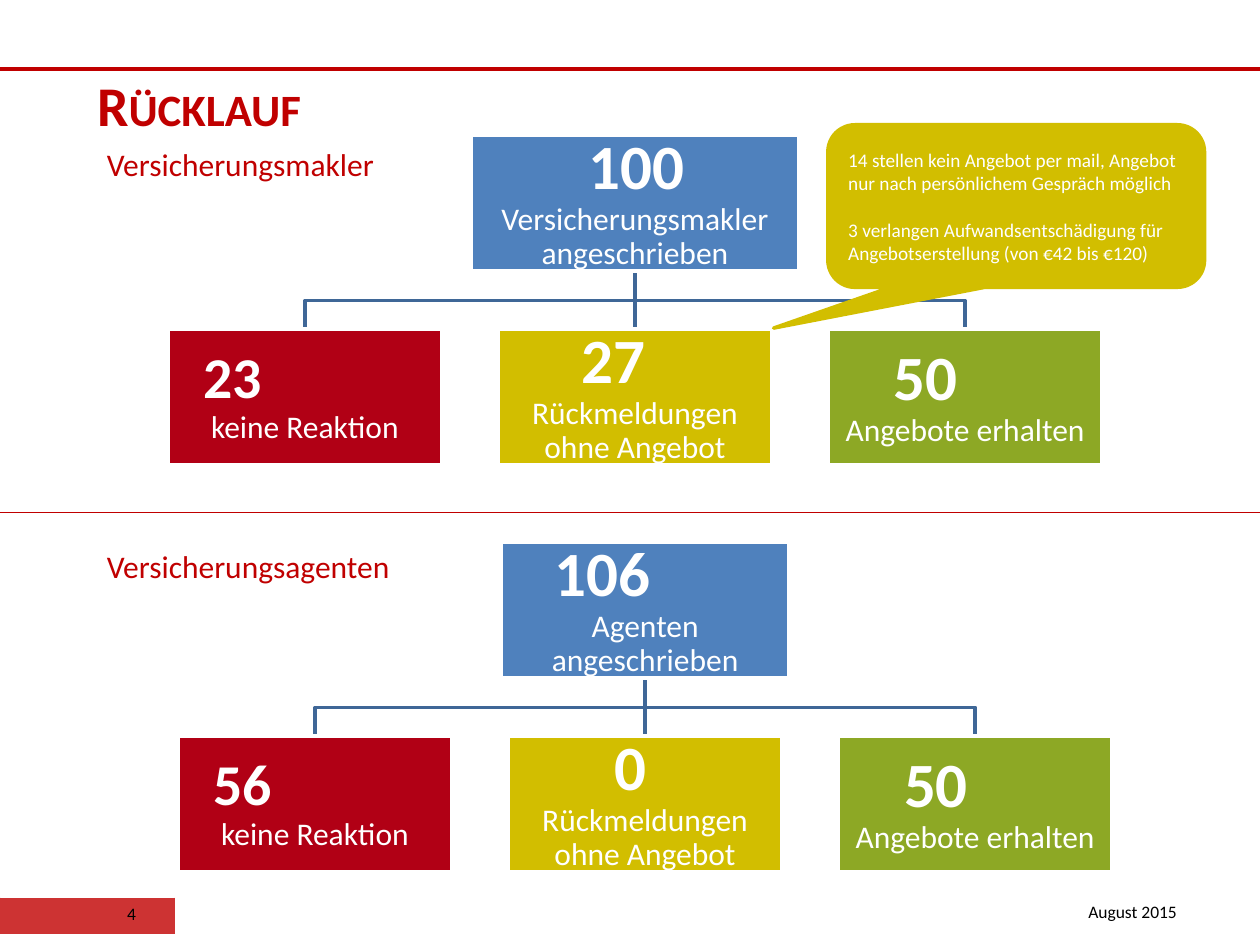
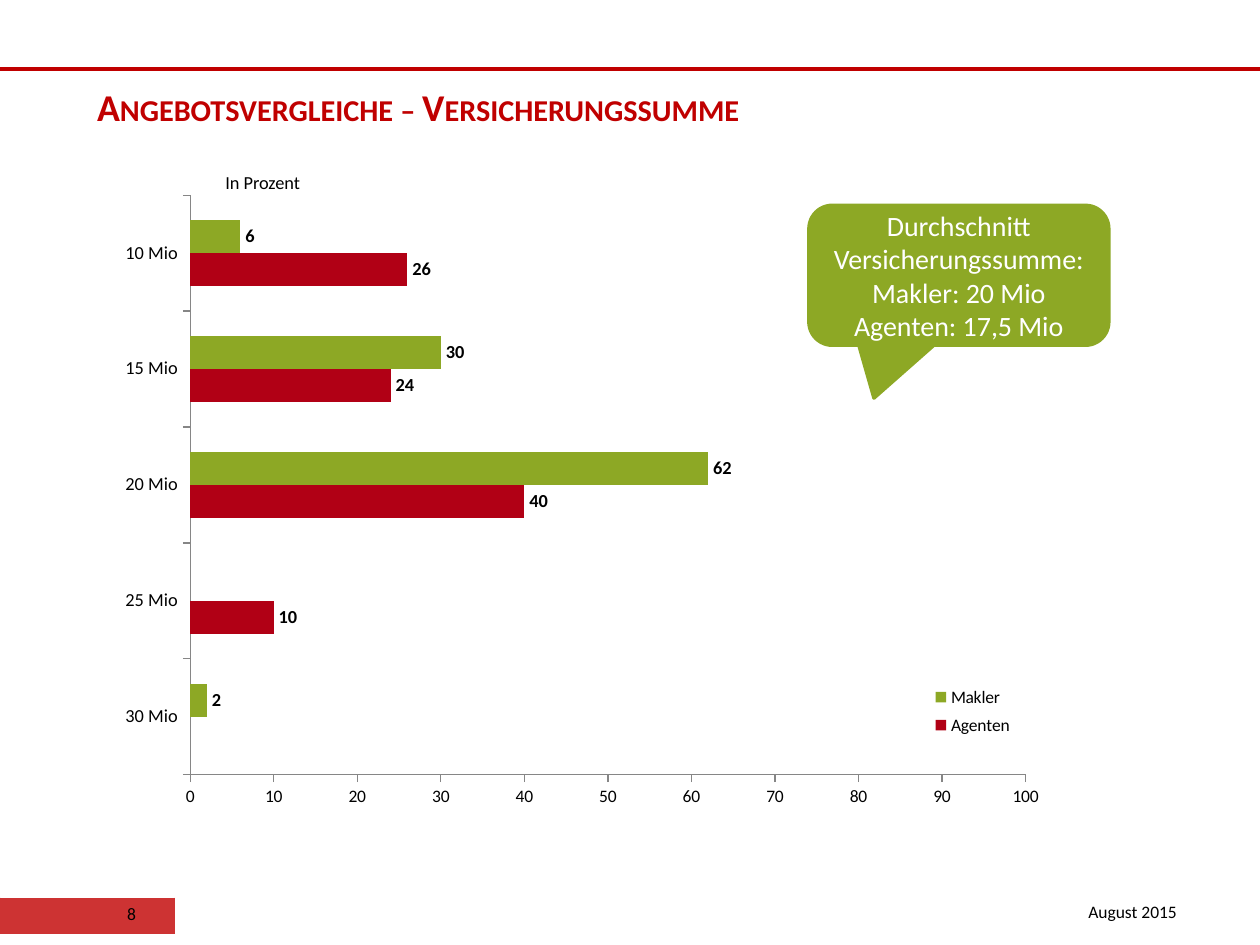
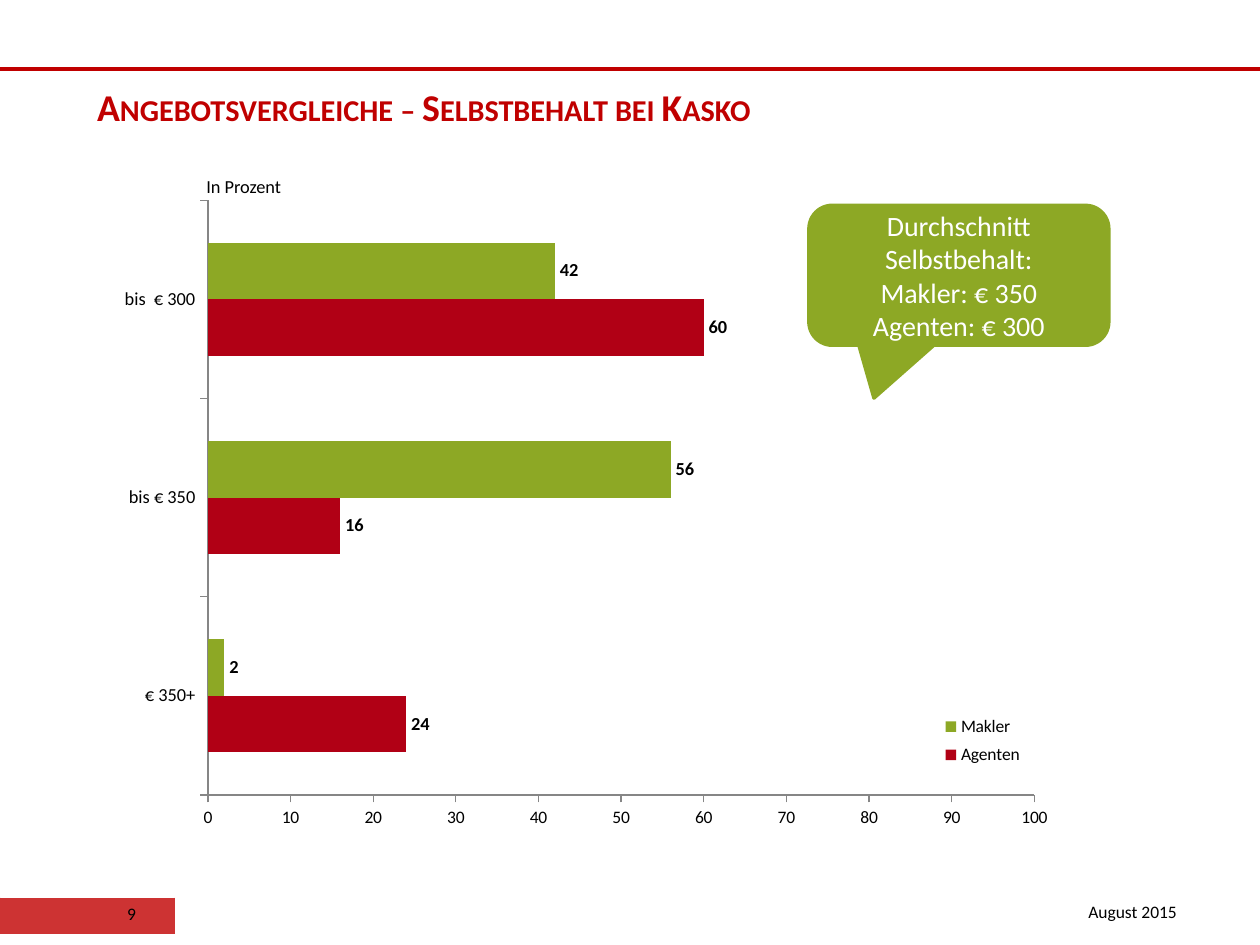
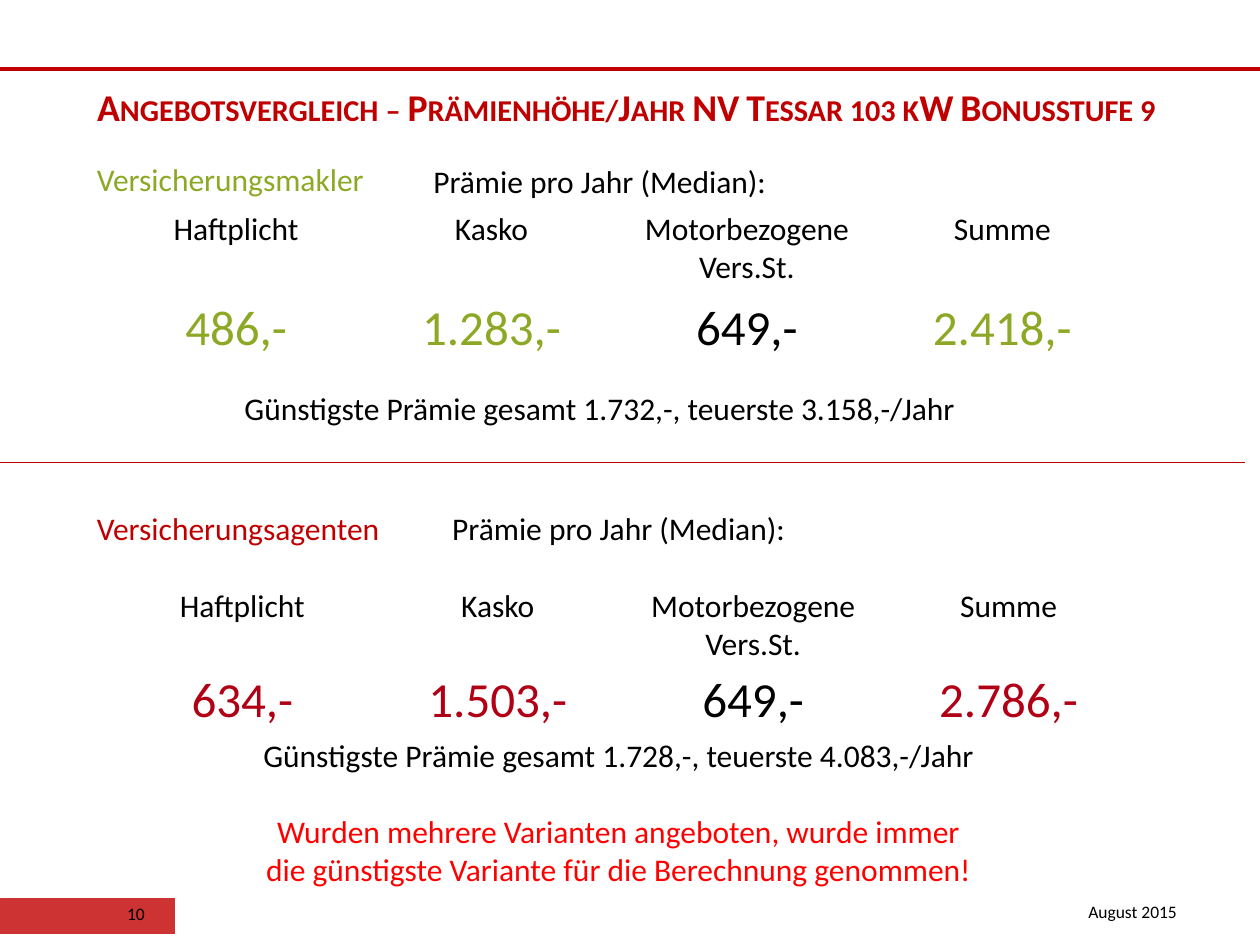
from lxml import etree
from pptx import Presentation
from pptx.chart.data import CategoryChartData
from pptx.dml.color import RGBColor
from pptx.enum.chart import XL_CHART_TYPE, XL_LABEL_POSITION, XL_LEGEND_POSITION, XL_TICK_MARK
from pptx.enum.shapes import MSO_CONNECTOR, MSO_SHAPE
from pptx.enum.text import MSO_ANCHOR, PP_ALIGN
from pptx.oxml.ns import qn
from pptx.util import Inches, Pt

BARS = XL_CHART_TYPE.BAR_CLUSTERED
OUT_END = XL_LABEL_POSITION.OUTSIDE_END
RIGHT = XL_LEGEND_POSITION.RIGHT
TICK_OUT = XL_TICK_MARK.OUTSIDE
LINE = MSO_CONNECTOR.STRAIGHT
RECT = MSO_SHAPE.RECTANGLE
CALLOUT = MSO_SHAPE.ROUNDED_RECTANGULAR_CALLOUT
TOP, MIDDLE, BOTTOM = MSO_ANCHOR.TOP, MSO_ANCHOR.MIDDLE, MSO_ANCHOR.BOTTOM
LEFT, CENTER = PP_ALIGN.LEFT, PP_ALIGN.CENTER

FONT = "Calibri"
SIDES = ("left", "top", "right", "bottom")
RED = RGBColor(0xC0, 0x00, 0x00)
BAND = RGBColor(0xCD, 0x33, 0x33)
CRIMSON = RGBColor(0xB1, 0x00, 0x15)
GREEN = RGBColor(0x8D, 0xA8, 0x25)
YELLOW = RGBColor(0xD2, 0xBE, 0x00)
BLUE = RGBColor(0x4F, 0x81, 0xBD)
STEEL = RGBColor(0x3F, 0x67, 0x97)
GREY = RGBColor(0x86, 0x86, 0x86)
ALERT = RGBColor(0xFF, 0x00, 0x00)
BLACK = RGBColor(0x00, 0x00, 0x00)
WHITE = RGBColor(0xFF, 0xFF, 0xFF)

DATE = "August 2015"

# Each node: number, size, indent of the number, label
TREES = [
    dict(name="Versicherungsmakler", name_top=1.1, mid=5.04, top=1.07, wide=2.6,
         root=("100", 36, 0.9, "Versicherungsmakler angeschrieben"),
         kids=[("23", 33, 0.25, "keine Reaktion"),
               ("27", 36, 0.63, "Rückmeldungen ohne Angebot"),
               ("50", 36, 0.49, "Angebote erhalten")]),
    dict(name="Versicherungsagenten", name_top=4.29, mid=5.12, top=4.3, wide=2.28,
         root=("106", 36, 0.39, "Agenten angeschrieben"),
         kids=[("56", 33, 0.25, "keine Reaktion"),
               ("0", 36, 0.81, "Rückmeldungen ohne Angebot"),
               ("50", 36, 0.49, "Angebote erhalten")]),
]
KID_FILLS = [CRIMSON, YELLOW, GREEN]
REMARKS = [
    "14 stellen kein Angebot per mail, Angebot nur nach persönlichem Gespräch möglich",
    "3 verlangen Aufwandsentschädigung für Angebotserstellung (von €42 bis €120)",
]

CHARTS = [
    dict(page=8, title="Angebotsvergleiche – Versicherungssumme",
         box=(0.83, 1.45, 8.35, 5.05), unit=(1.69, 1.31),
         plot=(1.51, 1.55, 6.63, 4.6), key=(7.3, 5.39, 0.84, 0.51),
         cats=["30 Mio", "25 Mio", "20 Mio", "15 Mio", "10 Mio"],
         rows=[("Agenten", [None, 10, 40, 24, 26]), ("Makler", [2, None, 62, 30, 6])],
         mean=["Durchschnitt Versicherungssumme:", "Makler: 20 Mio", "Agenten: 17,5 Mio"]),
    dict(page=9, title="Angebotsvergleiche – Selbstbehalt bei Kasko",
         box=(0.83, 1.48, 8.43, 5.18), unit=(1.54, 1.34),
         plot=(1.65, 1.59, 6.56, 4.72), key=(7.38, 5.62, 0.84, 0.52),
         cats=["€ 350+", "bis € 350", "bis  € 300"],
         rows=[("Agenten", [24, 16, 60]), ("Makler", [2, 56, 42])],
         mean=["Durchschnitt Selbstbehalt:", "Makler: € 350", "Agenten: € 300"]),
]
ROW_FILLS = [CRIMSON, GREEN]

HEADS = ["Haftplicht", "Kasko", "Motorbezogene Vers.St.", "Summe"]
MEDIAN = "Prämie pro Jahr (Median):"
FEES = [
    dict(name="Versicherungsmakler", name_box=(0.67, 1.22, 2.4, 0.4), hue=GREEN, tint=GREEN,
         note_box=(1.77, 1.24, 5.98, 2.22), grid=(0.86, 1.62), heights=(0.41, 0.41), tight=False,
         sums=["486,-", "1.283,-", "649,-", "2.418,-"],
         notes=[(MEDIAN, {}),
                ("Günstigste Prämie gesamt 1.732,-, teuerste 3.158,-/Jahr", dict(before=108))]),
    dict(name="Versicherungsagenten", name_box=(0.67, 3.99, 2.6, 0.4), hue=RED, tint=CRIMSON,
         note_box=(1.92, 3.99, 5.98, 3.13), grid=(0.91, 4.61), heights=(0.41, 0.49), tight=True,
         sums=["634,-", "1.503,-", "649,-", "2.786,-"],
         notes=[(MEDIAN, {}),
                ("Günstigste Prämie gesamt 1.728,-, teuerste 4.083,-/Jahr", dict(before=108)),
                ("Wurden mehrere Varianten angeboten, wurde immer die günstigste Variante "
                 "für die Berechnung genommen!", dict(before=22, color=ALERT))]),
]


def style(font, size, color=BLACK, bold=False):
    for key, value in dict(name=FONT, size=Pt(size), bold=bold).items():
        setattr(font, key, value)
    font.color.rgb = color


def pad(part, inset):
    for side in SIDES:
        setattr(part, "margin_" + side, Inches(inset))


def write(frame, paras, anchor=TOP, inset=None, **base):
    """Fill a frame with (text, format) pairs; base holds the common format."""
    frame.word_wrap = True
    frame.vertical_anchor = anchor
    if inset is not None:
        pad(frame, inset)
    for i, (text, own) in enumerate(paras):
        form = {**base, **own}
        para = frame.paragraphs[0] if i == 0 else frame.add_paragraph()
        para.alignment = form.get("align", LEFT)
        para.line_spacing = form.get("spacing", 1.0)
        para.space_before = Pt(form.get("before", 0))
        if "indent" in form:
            para._p.get_or_add_pPr().set("marL", str(Inches(form["indent"])))
        run = para.add_run()
        run.text = text
        style(run.font, form["size"], form.get("color", BLACK), form.get("bold", False))
    return frame


def label(slide, box, text, size, **form):
    frame = slide.shapes.add_textbox(*map(Inches, box)).text_frame
    return write(frame, [(text, {})], size=size, **form)


def block(slide, kind, box, fill, edge):
    shape = slide.shapes.add_shape(kind, *map(Inches, box))
    shape.shadow.inherit = False
    shape.fill.solid()
    shape.fill.fore_color.rgb = fill
    shape.line.color.rgb = edge
    shape.line.width = Pt(2)
    return shape


def rule(slide, start, end, color, width):
    line = slide.shapes.add_connector(LINE, *map(Inches, start + end))
    line.line.color.rgb = color
    line.line.width = Pt(width)
    etree.SubElement(line._element.spPr, qn("a:effectLst"))


def callout(slide, box, tail, fill, paras, **form):
    shape = block(slide, CALLOUT, box, fill, fill)
    for i, value in enumerate(tail + (0.167,)):
        shape.adjustments[i] = value
    write(shape.text_frame, paras, anchor=MIDDLE, color=WHITE, **form)


def plain(slide, box, rows, cols):
    """Add a table without banding or header style."""
    table = slide.shapes.add_table(rows, cols, *map(Inches, box)).table
    table.first_row = table.horz_banding = False
    return table


def band(slide):
    cell = plain(slide, (0, 7.13, 1.38, 0.28), 1, 1).cell(0, 0)
    para = cell.text_frame.paragraphs[0]
    etree.SubElement(para._p, qn("a:endParaRPr")).set("sz", "800")
    cell.fill.solid()
    cell.fill.fore_color.rgb = BAND
    props = cell._tc.get_or_add_tcPr()
    for i, side in enumerate("LRTB"):
        edge = etree.Element(qn("a:ln" + side), w=str(Pt(1)))
        paint = etree.SubElement(edge, qn("a:solidFill"))
        etree.SubElement(paint, qn("a:srgbClr")).set("val", str(BAND))
        props.insert(i, edge)


def start(deck, page, title, box=(0.28, 0.62, 9.72, 0.45), size=21.6, anchor=BOTTOM):
    """Add a slide with its band, footer, top rule and title."""
    slide = deck.slides.add_slide(deck.slide_layouts[6])
    band(slide)
    label(slide, (8.54, 7.1, 1.14, 0.27), DATE, 10)
    label(slide, (0.91, 7.12, 0.71, 0.27), str(page), 10)
    rule(slide, (0, 0.55), (10, 0.55), RED, 2.5)
    frame = label(slide, box, title, size, color=RED, bold=True, anchor=anchor)
    frame.margin_left = Inches(0.49)
    frame.paragraphs[0].runs[0]._r.get_or_add_rPr().set("cap", "small")
    return slide


def node(slide, box, fill, data):
    count, size, indent, text = data
    shape = block(slide, RECT, box, fill, WHITE)
    write(shape.text_frame,
          [(count, dict(size=size, bold=True, indent=indent)), (text, dict(size=18, align=CENTER))],
          anchor=MIDDLE, inset=0.03, color=WHITE, spacing=0.9)


def branch(slide, points):
    (x, y), *rest = [(Inches(a), Inches(b)) for a, b in points]
    pen = slide.shapes.build_freeform(x, y)
    pen.add_line_segments(rest, close=False)
    shape = pen.convert_to_shape()
    shape.shadow.inherit = False
    shape.fill.background()
    shape.line.color.rgb = STEEL
    shape.line.width = Pt(2)


def tree(slide, name, name_top, mid, top, wide, root, kids):
    high, kid_wide, pitch, drop = 1.08, 2.17, 2.62, 1.54
    low, kid_top = top + high + 0.01, top + drop
    bend = (low + kid_top) / 2
    mids = [mid + (i - 1) * pitch for i in range(len(kids))]
    for x in mids:
        turn = [] if x == mid else [(mid, bend), (x, bend)]
        branch(slide, [(mid, low), *turn, (x, kid_top)])
    node(slide, (mid - wide / 2, top, wide, high), BLUE, root)
    for x, fill, kid in zip(mids, KID_FILLS, kids):
        node(slide, (x - kid_wide / 2, kid_top, kid_wide, high), fill, kid)
    label(slide, (0.75, name_top, 2.6, 0.4), name, 18, color=RED)


def place(part, index, box, area):
    """Lay out a chart part at a slide box, as fractions of the chart area."""
    for old in part.findall(qn("c:layout")):
        part.remove(old)
    layout = etree.Element(qn("c:layout"))
    manual = etree.SubElement(layout, qn("c:manualLayout"))
    left, top, wide, high = area
    x, y, w, h = box
    parts = ((x - left) / wide, (y - top) / high, w / wide, h / high)
    items = [("xMode", "edge"), ("yMode", "edge"), *zip("xywh", parts)]
    if index == 0:
        items.insert(0, ("layoutTarget", "inner"))
    for tag, value in items:
        etree.SubElement(manual, qn("c:" + tag)).set("val", str(value))
    part.insert(index, layout)


def bars(slide, box, cats, rows, plot, key):
    data = CategoryChartData()
    data.categories = cats
    for name, values in rows:
        data.add_series(name, values)
    chart = slide.shapes.add_chart(BARS, *map(Inches, box), data).chart
    style(chart.font, 10)
    chart.has_title = False
    chart.has_legend = True
    chart.legend.position = RIGHT
    chart.legend.include_in_layout = False
    place(chart._chartSpace.chart.plotArea, 0, plot, box)
    place(chart.legend._element, 1, key, box)
    for axis, size in ((chart.category_axis, 10.5), (chart.value_axis, 10)):
        axis.has_major_gridlines = False
        axis.major_tick_mark = TICK_OUT
        axis.format.line.color.rgb = GREY
        style(axis.tick_labels.font, size)
    for name, value in dict(minimum_scale=0, maximum_scale=100, major_unit=10).items():
        setattr(chart.value_axis, name, value)
    group = chart.plots[0]
    for name, value in dict(gap_width=150, overlap=0, vary_by_categories=False).items():
        setattr(group, name, value)
    for series, fill in zip(group.series, ROW_FILLS):
        series.format.fill.solid()
        series.format.fill.fore_color.rgb = fill
        series.data_labels.show_value = True
        series.data_labels.position = OUT_END
        style(series.data_labels.font, 10.5, bold=True)


def grid(slide, spot, heights, sums, tint, tight):
    table = plain(slide, spot + (8.11, sum(heights)), 2, len(HEADS))
    for row, high in zip(table.rows, heights):
        row.height = Inches(high)
    for c, pair in enumerate(zip(HEADS, sums)):
        hue = BLACK if c == 2 else tint
        for r, (text, points, color) in enumerate(zip(pair, (18, 28), (BLACK, hue))):
            cell = table.cell(r, c)
            cell.fill.background()
            para = cell.text_frame.paragraphs[0]
            para.alignment = CENTER
            run = para.add_run()
            run.text = text
            style(run.font, points, color)
            if r and tight:
                cell.vertical_anchor = BOTTOM
                pad(cell, 0.01)
                cell.margin_bottom = 0


def main():
    deck = Presentation()
    deck.slide_width, deck.slide_height = Inches(10), Inches(7.5)

    slide = start(deck, 4, "Rücklauf", (0.28, 0.29, 9.72, 1.08), 32, MIDDLE)
    for data in TREES:
        tree(slide, **data)
    rule(slide, (0, 4.07), (10, 4.07), RED, 0.75)
    callout(slide, (6.57, 0.99, 2.99, 1.29), (-0.644, 0.751), YELLOW,
            [(text, dict(before=13.4 * i)) for i, text in enumerate(REMARKS)], size=11)

    for data in CHARTS:
        slide = start(deck, data["page"], data["title"])
        bars(slide, *(data[k] for k in ("box", "cats", "rows", "plot", "key")))
        label(slide, data["unit"] + (0.84, 0.29), "In Prozent", 10.5)
        callout(slide, (6.42, 1.63, 2.38, 1.11), (-0.283, 0.878), GREEN,
                [(text, {}) for text in data["mean"]], size=16, align=CENTER)

    slide = start(deck, 10, "Angebotsvergleich – Prämienhöhe/Jahr NV Tessar 103 kW Bonusstufe 9")
    rule(slide, (-0.12, 3.67), (9.88, 3.67), RED, 0.75)
    for fee in FEES:
        label(slide, fee["name_box"], fee["name"], 18, color=fee["hue"])
        notes = slide.shapes.add_textbox(*map(Inches, fee["note_box"]))
        write(notes.text_frame, fee["notes"], size=18, align=CENTER)
        grid(slide, *(fee[k] for k in ("grid", "heights", "sums", "tint", "tight")))

    deck.save("out.pptx")


if __name__ == "__main__":
    main()
